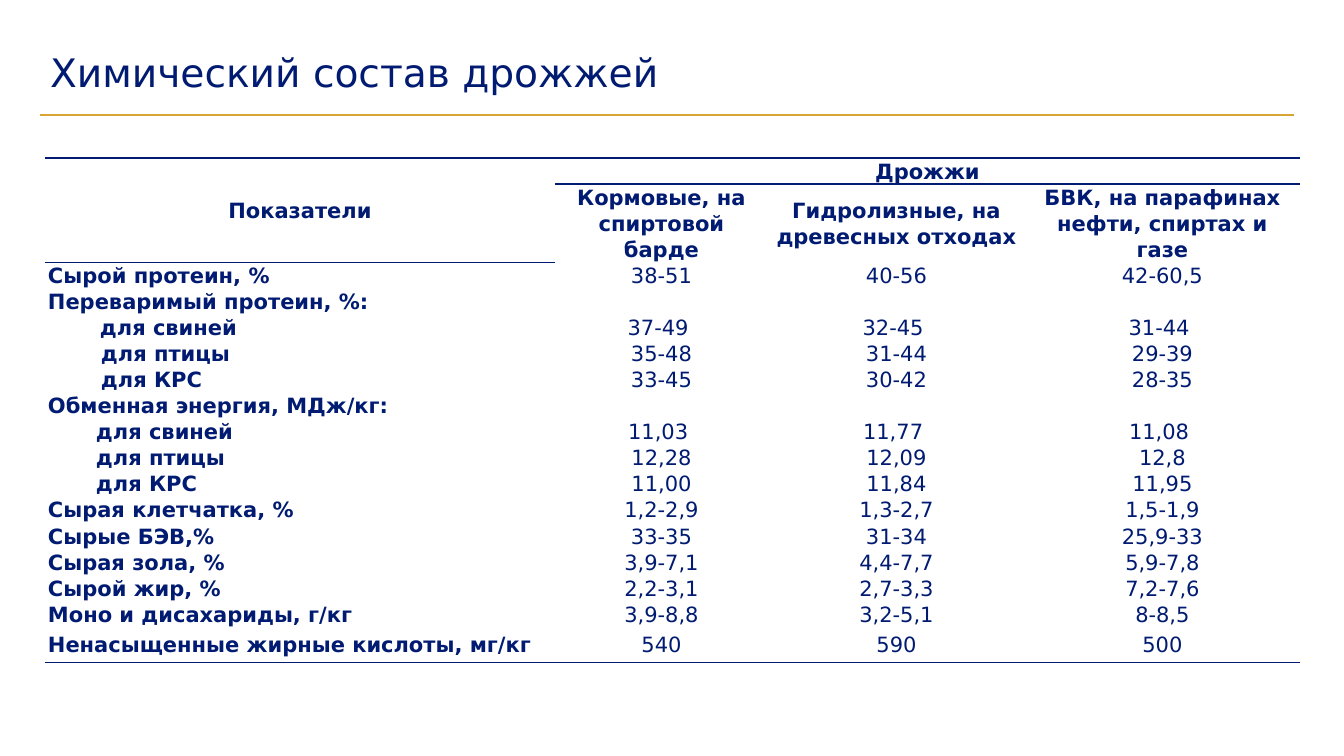
from dataclasses import dataclass

from lxml.etree import SubElement
from pptx import Presentation
from pptx.dml.color import RGBColor
from pptx.enum.shapes import MSO_CONNECTOR
from pptx.enum.text import MSO_ANCHOR, PP_ALIGN
from pptx.oxml.ns import qn
from pptx.util import Pt

# Content
TITLE = "Химический состав дрожжей"
CORNER, GROUP = "Показатели", "Дрожжи"
KINDS = ["Кормовые, на спиртовой барде", "Гидролизные, на древесных отходах",
         "БВК, на парафинах нефти, спиртах и газе"]
# Label lines, indent of the last line in px, values
ROWS = [
    (["Сырой протеин, %"], 0, ["38-51", "40-56", "42-60,5"]),
    (["Переваримый протеин, %:", "для свиней"], 52, ["37-49 ", "32-45 ", "31-44 "]),
    (["для птицы"], 53, ["35-48", "31-44", "29-39"]),
    (["для КРС"], 53, ["33-45", "30-42", "28-35"]),
    (["Обменная энергия, МДж/кг:", "для свиней"], 48, ["11,03 ", "11,77 ", "11,08 "]),
    (["для птицы"], 48, ["12,28", "12,09", "12,8"]),
    (["для КРС"], 48, ["11,00", "11,84", "11,95"]),
    (["Сырая клетчатка, %"], 0, ["1,2-2,9", "1,3-2,7", "1,5-1,9"]),
    (["Сырые БЭВ,%"], 0, ["33-35", "31-34", "25,9-33"]),
    (["Сырая зола, %"], 0, ["3,9-7,1", "4,4-7,7", "5,9-7,8"]),
    (["Сырой жир, %"], 0, ["2,2-3,1", "2,7-3,3", "7,2-7,6"]),
    (["Моно и дисахариды, г/кг"], 0, ["3,9-8,8", "3,2-5,1", "8-8,5"]),
    (["Ненасыщенные жирные кислоты, мг/кг"], 0, ["540", "590", "500"]),
]


@dataclass(frozen=True)
class Theme:
    font: str = "DejaVu Sans"
    ink: str = "001B71"
    rule: str = "D7A534"
    title: int = 28
    body: int = 15
    border: int = 1


THEME = Theme()
LINE_H, LAST_H = 26, 35
COLS = [510, 213, 257, 275]


def px(n):
    return round(n * 914400 / 100.8)


def write(tf, lines, size=THEME.body, bold=False, align=PP_ALIGN.LEFT,
          spacing=1.07, indent=0):
    for i, line in enumerate(lines):
        p = tf.paragraphs[0] if i == 0 else tf.add_paragraph()
        p.alignment, p.line_spacing, p.space_before = align, spacing, Pt(0)
        if indent and i == len(lines) - 1:
            pPr = p._p.get_or_add_pPr()
            pPr.set("marL", "0")
            pPr.set("indent", str(px(indent)))
        r = p.add_run()
        r.text = line
        r.font.name, r.font.size, r.font.bold = THEME.font, Pt(size), bold
        r.font.color.rgb = RGBColor.from_string(THEME.ink)


def add_border(cell, side):
    ln = SubElement(cell._tc.get_or_add_tcPr(), qn(f"a:ln{side}"),
                    w=str(Pt(THEME.border)))
    fill = SubElement(ln, qn("a:solidFill"))
    SubElement(fill, qn("a:srgbClr"), val=THEME.ink)


def add_title(s):
    sp = s.shapes.title
    sp.left, sp.top, sp.width, sp.height = px(40), px(45), px(1254), px(60)
    tf = sp.text_frame
    tf.word_wrap, tf.vertical_anchor = True, MSO_ANCHOR.MIDDLE
    write(tf, [TITLE], size=THEME.title, spacing=0.9)

    rule = s.shapes.add_connector(MSO_CONNECTOR.STRAIGHT, px(40), px(115), px(1294), px(115))
    rule.line.color.rgb = RGBColor.from_string(THEME.rule)
    rule.line.width = Pt(1)
    SubElement(rule._element.spPr, qn("a:effectLst"))


def add_yeast_table(s):
    heights = [LINE_H, 3 * LINE_H] + [LINE_H * len(labels) for labels, _, _ in ROWS]
    heights[-1] = LAST_H
    last = len(heights) - 1
    table = s.shapes.add_table(len(heights), len(COLS), px(45), px(158),
                               px(sum(COLS)), px(sum(heights))).table
    # Plain style without grid
    table._tbl.tblPr.find(qn("a:tableStyleId")).text = "{2D5ABB26-0587-4C30-8999-92F81FD0307C}"
    table.first_row = table.horz_banding = False
    for col, width in zip(table.columns, COLS):
        col.width = px(width)
    for row, height in zip(table.rows, heights):
        row.height = px(height)

    # Cell frames
    for y in range(len(heights)):
        for x in range(len(COLS)):
            cell = table.cell(y, x)
            cell.margin_left = cell.margin_right = px(3)
            cell.margin_top = cell.margin_bottom = 0
            cell.vertical_anchor = MSO_ANCHOR.MIDDLE
            if y == 0:
                add_border(cell, "T")
            if y in (0, last) or (y, x) == (1, 0):
                add_border(cell, "B")
            cell.fill.background()

    # Header
    table.cell(0, 0).merge(table.cell(1, 0))
    table.cell(0, 1).merge(table.cell(0, 3))
    table.cell(0, 1).vertical_anchor = MSO_ANCHOR.TOP
    heads = [(0, 0, CORNER), (0, 1, GROUP)] + [(1, x, k) for x, k in enumerate(KINDS, 1)]
    for y, x, text in heads:
        write(table.cell(y, x).text_frame, [text], bold=True, align=PP_ALIGN.CENTER)

    # Body
    for y, (labels, indent, values) in enumerate(ROWS, 2):
        write(table.cell(y, 0).text_frame, labels, bold=True, indent=indent)
        for x, value in enumerate(values, 1):
            cell = table.cell(y, x)
            if len(labels) > 1:
                cell.vertical_anchor = MSO_ANCHOR.BOTTOM
            write(cell.text_frame, [value], align=PP_ALIGN.CENTER)


def main():
    prs = Presentation()
    prs.slide_width, prs.slide_height = px(1344), px(756)
    s = prs.slides.add_slide(prs.slide_layouts[5])
    add_title(s)
    add_yeast_table(s)
    prs.save("out.pptx")


if __name__ == "__main__":
    main()
